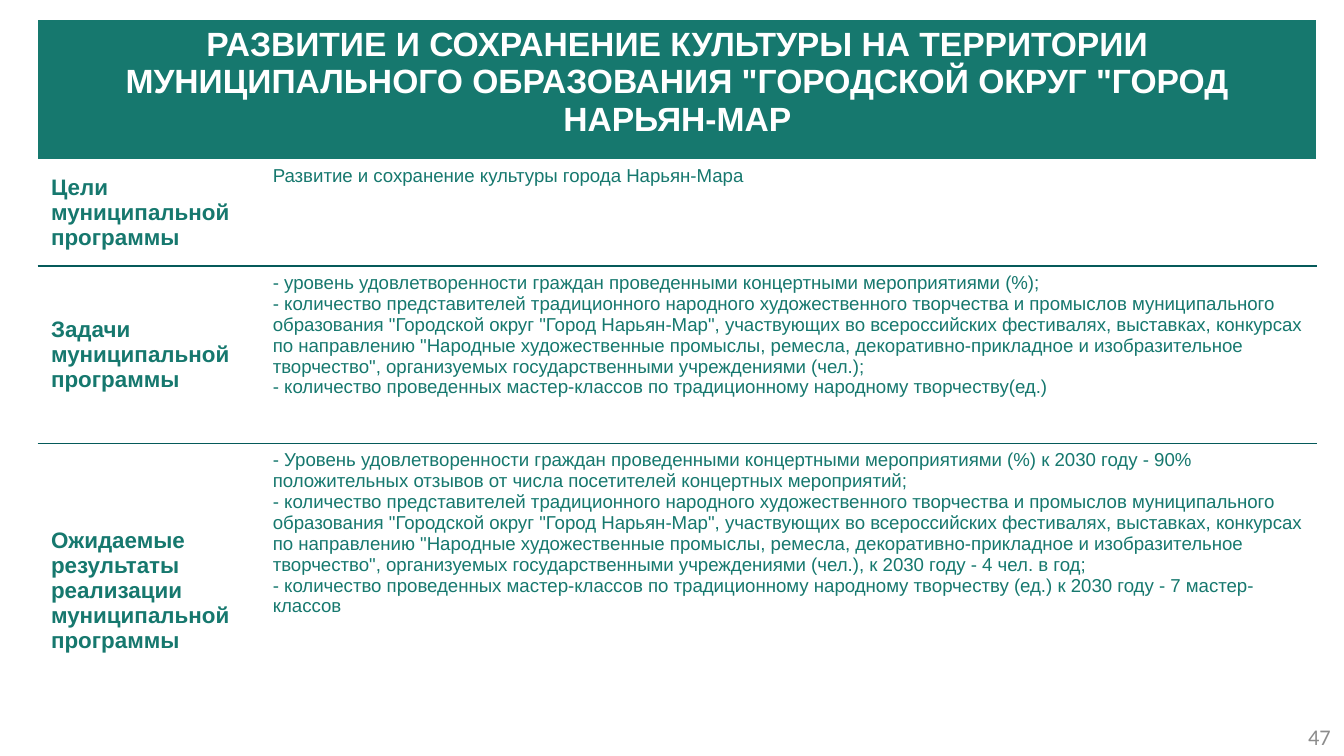
from lxml import etree
from pptx import Presentation
from pptx.dml.color import RGBColor
from pptx.enum import text
from pptx.oxml import ns
from pptx.util import Inches, Pt

# Content
HEADING = ('РАЗВИТИЕ И СОХРАНЕНИЕ КУЛЬТУРЫ НА ТЕРРИТОРИИ МУНИЦИПАЛЬНОГО '
           'ОБРАЗОВАНИЯ "ГОРОДСКОЙ ОКРУГ "ГОРОД НАРЬЯН-МАР')
CRAFTS = ('- количество представителей традиционного народного художественного '
          'творчества и промыслов муниципального образования "Городской округ '
          '"Город Нарьян-Мар", участвующих во всероссийских фестивалях, выставках, '
          'конкурсах по направлению "Народные художественные промыслы, ремесла, '
          'декоративно-прикладное и изобразительное творчество", организуемых '
          'государственными учреждениями (чел.)')
SECTIONS = [
    ("Цели муниципальной программы",
     ["Развитие и сохранение культуры города Нарьян-Мара"]),
    ("Задачи муниципальной программы",
     ["- уровень удовлетворенности граждан проведенными концертными мероприятиями (%);",
      CRAFTS + ";",
      "- количество проведенных мастер-классов по традиционному народному творчеству(ед.)"]),
    ("Ожидаемые результаты реализации муниципальной программы",
     ["- Уровень удовлетворенности граждан проведенными концертными мероприятиями (%) "
      "к 2030 году - 90% положительных отзывов от числа посетителей концертных мероприятий;",
      CRAFTS + ", к 2030 году - 4 чел. в год;",
      "- количество проведенных мастер-классов по традиционному народному творчеству (ед.) "
      "к 2030 году - 7 мастер-классов"]),
]
PAGE_NUMBER = "47"

# Theme and layout
THEME = {
    "green": "16786E", "rule": "055A5A", "white": "FFFFFF",
    "heading": {"name": "Arial", "size": Pt(18), "bold": True, "color": "FFFFFF"},
    "label": {"name": "Arial", "size": Pt(12), "bold": True, "color": "16786E"},
    "body": {"name": "Arial", "size": Pt(10), "bold": False, "color": "16786E"},
    "number": {"name": "Calibri", "size": Pt(12), "bold": False, "color": "8C8C8C"},
}
COLUMNS = [1.65, 7.87]
ROWS = [1.04, 0.8, 1.32, 2.19]
PLAIN_STYLE = "{2D5ABB26-0587-4C30-8999-92F81FD0307C}"


def write(frame, lines, style, align=text.PP_ALIGN.LEFT):
    for index, line in enumerate(lines):
        para = frame.paragraphs[0] if index == 0 else frame.add_paragraph()
        para.alignment = align
        span = para.add_run()
        span.text = line
        for key, value in THEME[style].items():
            if key == "color":
                span.font.color.rgb = RGBColor.from_string(value)
            else:
                setattr(span.font, key, value)


def add_borders(cell, sides, color):
    """Draw one-point borders; sides are given in the order L, R, T, B."""
    properties = cell._tc.get_or_add_tcPr()
    for side in sides:
        line = etree.SubElement(properties, ns.qn(f"a:ln{side}"), w=str(Pt(1)))
        fill = etree.SubElement(line, ns.qn("a:solidFill"))
        etree.SubElement(fill, ns.qn("a:srgbClr"), val=color)


# Widescreen page, 16:9
deck = Presentation()
deck.slide_width = Inches(10)
deck.slide_height = deck.slide_width * 9 // 16
page = deck.slides.add_slide(deck.slide_layouts[6])

# Page number
box = page.shapes.add_textbox(Inches(7.67), Inches(5.33), Inches(2.33), Inches(0.3))
box.text_frame.word_wrap = True
box.text_frame.vertical_anchor = text.MSO_ANCHOR.MIDDLE
write(box.text_frame, [PAGE_NUMBER], "number", text.PP_ALIGN.RIGHT)

# Programme table
frame = page.shapes.add_table(len(ROWS), len(COLUMNS), Inches(0.28), Inches(0.14),
                              Inches(sum(COLUMNS)), Inches(sum(ROWS)))
table = frame.table
table.first_row = table.horz_banding = False
table._tbl.tblPr.find(ns.qn("a:tableStyleId")).text = PLAIN_STYLE
for column, width in zip(table.columns, COLUMNS):
    column.width = Inches(width)
for row, height in zip(table.rows, ROWS):
    row.height = Inches(height)

# Heading row
heading = table.cell(0, 0)
heading.merge(table.cell(0, 1))
for cell in table.rows[0].cells:
    add_borders(cell, "LRT", THEME["white"])
    cell.fill.solid()
    cell.fill.fore_color.rgb = RGBColor.from_string(THEME["green"])
write(heading.text_frame, [HEADING], "heading", text.PP_ALIGN.CENTER)

# Section rows, with a rule between neighbours
for number, (label, lines) in enumerate(SECTIONS, start=1):
    sides = ("T" if number > 1 else "") + ("B" if number < len(SECTIONS) else "")
    label_cell, body_cell = table.cell(number, 0), table.cell(number, 1)
    for cell in (label_cell, body_cell):
        add_borders(cell, sides, THEME["rule"])
        cell.fill.background()
    label_cell.vertical_anchor = text.MSO_ANCHOR.MIDDLE
    write(label_cell.text_frame, [label], "label")
    write(body_cell.text_frame, lines, "body")

deck.save("out.pptx")
